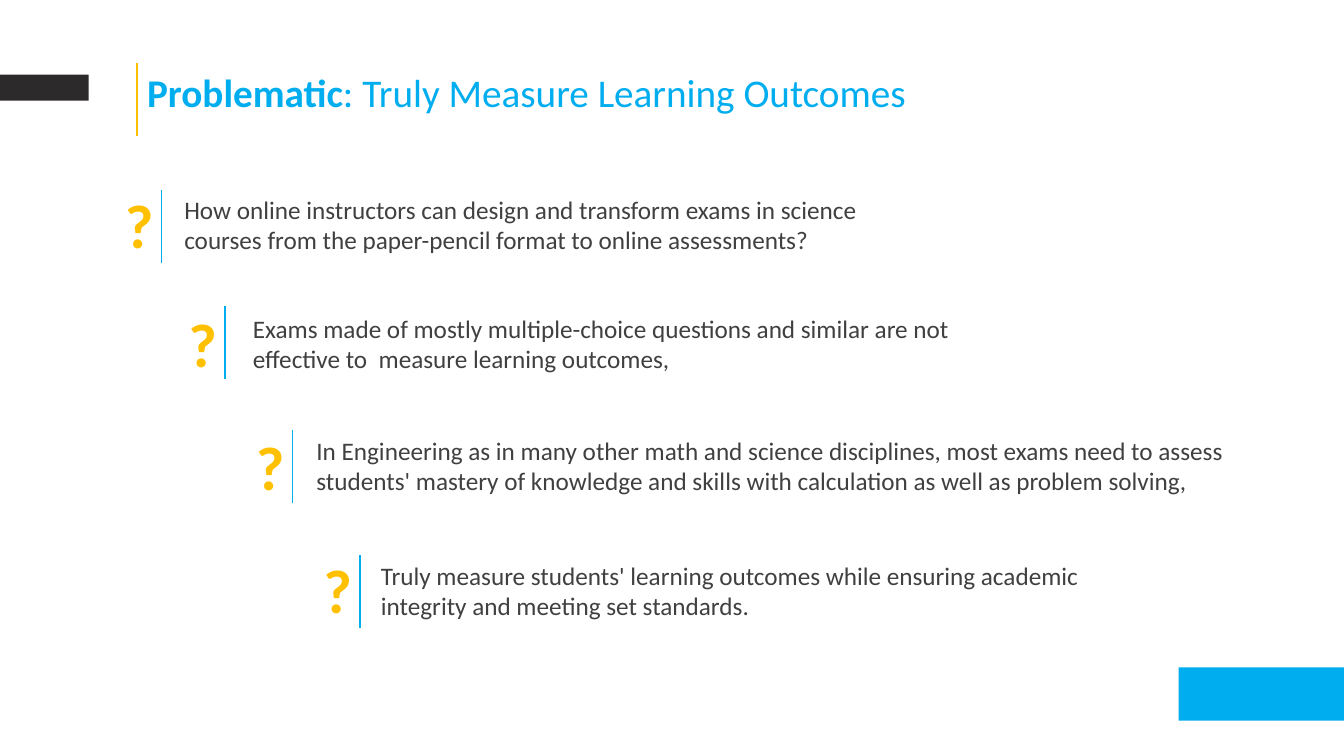
from pptx import Presentation
from pptx.dml.color import RGBColor
from pptx.enum.shapes import MSO_CONNECTOR, MSO_SHAPE
from pptx.enum.text import MSO_ANCHOR, MSO_AUTO_SIZE, PP_ALIGN
from pptx.oxml.ns import qn
from pptx.util import Inches, Pt
from lxml.etree import SubElement

BLUE = RGBColor(0x00, 0xAD, 0xEF)
GOLD = RGBColor(0xFF, 0xC0, 0x00)
DARK = RGBColor(0x2C, 0x2A, 0x2B)
GRAY = RGBColor(0x40, 0x40, 0x40)

prs = Presentation()
prs.slide_width, prs.slide_height = Inches(13.33), Inches(7.5)
slide = prs.slides.add_slide(prs.slide_layouts[5])
shapes = slide.shapes


def add_rule(x, y, color):
    rule = shapes.add_connector(MSO_CONNECTOR.STRAIGHT, Inches(x), Inches(y),
                                Inches(x), Inches(y + 0.72))
    rule.line.color.rgb = color
    rule.line.width = Pt(1)
    SubElement(rule._element.spPr, qn("a:effectLst"))


def add_text(x, y, w, h, text, size, color, bold):
    box = shapes.add_textbox(Inches(x), Inches(y), Inches(w), Inches(h))
    frame = box.text_frame
    frame.word_wrap = True
    frame.text = text
    font = frame.paragraphs[0].runs[0].font
    font.name, font.size, font.bold = "Calibri", Pt(size), bold
    font.color.rgb = color


# Corner bars
for x, y, w, h, color in [(11.69, 6.62, 1.86, 0.53, BLUE),
                          (-0.01, 0.74, 0.89, 0.26, DARK)]:
    bar = shapes.add_shape(MSO_SHAPE.RECTANGLE, Inches(x), Inches(y),
                           Inches(w), Inches(h))
    bar.shadow.inherit = False
    bar.fill.solid()
    bar.fill.fore_color.rgb = color
    bar.line.fill.background()

# Title with its gold rule
title = shapes.title
title.left, title.top = Inches(1.36), Inches(0.63)
title.width, title.height = Inches(8.02), Inches(0.57)
frame = title.text_frame
frame.auto_size = MSO_AUTO_SIZE.NONE
frame.word_wrap = False
frame.vertical_anchor = MSO_ANCHOR.TOP
head = frame.paragraphs[0]
head.alignment = PP_ALIGN.LEFT
for text, bold in [("Problematic", True),
                   (": Truly Measure Learning Outcomes", False)]:
    run = head.add_run()
    run.text = text
    run.font.name, run.font.size, run.font.bold = "Calibri", Pt(28), bold
    run.font.color.rgb = BLUE
add_rule(1.36, 0.63, GOLD)

# Staggered questions: mark left and top, rule top, text left, top and width
points = [
    (1.14, 1.81, 1.89, 1.73, 1.88, 7.27,
     "How online instructors can design and transform exams in science "
     "courses from the paper-pencil format to online assessments?"),
    (1.77, 2.99, 3.04, 2.41, 3.06, 7.44,
     "Exams made of mostly multiple-choice questions and similar are not "
     "effective to  measure learning outcomes,"),
    (2.44, 4.21, 4.27, 3.04, 4.27, 9.36,
     "In Engineering as in many other math and science disciplines, most "
     "exams need to assess students' mastery of knowledge and skills with "
     "calculation as well as problem solving,"),
    (3.11, 5.43, 5.51, 3.68, 5.51, 7.56,
     "Truly measure students' learning outcomes while ensuring academic "
     "integrity and meeting set standards."),
]
for mark_x, mark_y, rule_y, x, y, w, text in points:
    add_text(mark_x, mark_y, 0.35, 0.84, "?", 44, GOLD, True)
    add_rule(mark_x + 0.46, rule_y, BLUE)
    add_text(x, y, w, 0.71, text, 18, GRAY, False)

prs.save("out.pptx")
